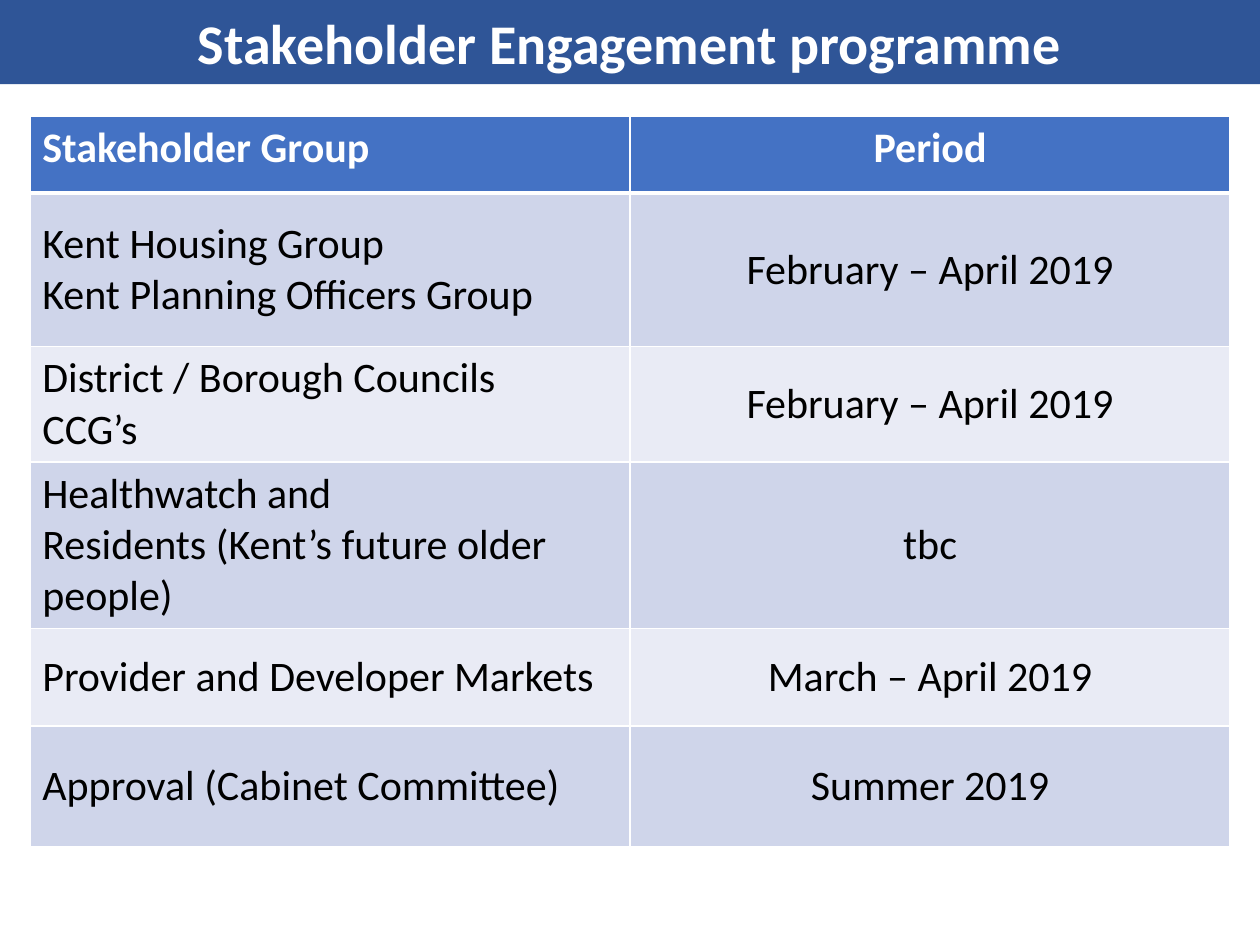
from dataclasses import dataclass

from lxml.etree import SubElement
from pptx import Presentation
from pptx.dml.color import RGBColor as Color
from pptx.enum.shapes import MSO_SHAPE as Shape
from pptx.enum.text import MSO_ANCHOR as Anchor, PP_ALIGN as Align
from pptx.oxml.ns import qn
from pptx.util import Cm, Pt


@dataclass(frozen=True)
class Theme:
    font: str = "Calibri"
    title_size: int = 32
    table_size: int = 24
    banner: str = "2F5597"
    header: str = "4472C4"
    bands: tuple = ("CFD5EA", "E9EBF5")
    light: str = "FFFFFF"
    dark: str = "000000"
    rule: int = 1
    header_rule: int = 3


class SlideBuilder:
    def __init__(self, page, theme):
        self.page = page
        self.theme = theme

    def set_text(self, frame, lines, size, color, bold=False, align=Align.LEFT):
        frame.text = "\n".join(lines)
        for para in frame.paragraphs:
            para.alignment = align
            font = para.font
            font.name = self.theme.font
            font.size = Pt(size)
            font.bold = bold
            font.color.rgb = Color.from_string(color)

    def banner(self, text, width, height):
        box = self.page.shapes.add_shape(Shape.RECTANGLE, 0, 0, width, height)
        box.shadow.inherit = False
        box.fill.solid()
        box.fill.fore_color.rgb = Color.from_string(self.theme.banner)
        box.line.fill.background()
        box.text_frame.vertical_anchor = Anchor.MIDDLE
        self.set_text(box.text_frame, [text], self.theme.title_size,
                      self.theme.light, bold=True, align=Align.CENTER)

    def borders(self, cell, top, bottom):
        properties = cell._tc.get_or_add_tcPr()
        rule = self.theme.rule
        for side, width in (("L", rule), ("R", rule), ("T", top), ("B", bottom)):
            line = SubElement(properties, qn(f"a:ln{side}"), w=str(Pt(width)))
            fill = SubElement(line, qn("a:solidFill"))
            SubElement(fill, qn("a:srgbClr"), val=self.theme.light)

    def table(self, rows, heights, left, top, width, height):
        theme = self.theme
        columns = len(rows[0])
        frame = self.page.shapes.add_table(len(rows), columns, left, top, width, height)
        table = frame.table
        for row, row_height in zip(table.rows, heights):
            row.height = Cm(row_height)
        frame.height = height

        for r, row in enumerate(rows):
            is_header = r == 0
            fill = theme.header if is_header else theme.bands[(r - 1) % 2]
            for c, lines in enumerate(row):
                cell = table.cell(r, c)
                # The heavy rule lies between the header and the first body row
                self.borders(cell,
                             top=theme.header_rule if r == 1 else theme.rule,
                             bottom=theme.header_rule if is_header else theme.rule)
                cell.fill.solid()
                cell.fill.fore_color.rgb = Color.from_string(fill)
                cell.vertical_anchor = Anchor.TOP if is_header else Anchor.MIDDLE
                self.set_text(cell.text_frame, lines, theme.table_size,
                              theme.light if is_header else theme.dark,
                              bold=is_header,
                              align=Align.CENTER if c else Align.LEFT)


PROGRAMME = [
    (["Stakeholder Group"], ["Period"]),
    (["Kent Housing Group", "Kent Planning Officers Group"], ["February – April 2019"]),
    (["District / Borough Councils", "CCG’s"], ["February – April 2019"]),
    (["Healthwatch and", "Residents (Kent’s future older people)"], ["tbc"]),
    (["Provider and Developer Markets"], ["March – April 2019"]),
    (["Approval (Cabinet Committee)"], ["Summer 2019"]),
]
ROW_HEIGHTS = [1.55, 3.1, 1.55, 1.55, 1.97, 2.44]


def main():
    deck = Presentation()
    deck.slide_width, deck.slide_height = Cm(25.4), Cm(19.05)
    page = deck.slides.add_slide(deck.slide_layouts[6])
    builder = SlideBuilder(page, Theme())

    # Title band across the top
    builder.banner("Stakeholder Engagement programme", deck.slide_width, Cm(1.7))

    # Engagement timetable
    builder.table(PROGRAMME, ROW_HEIGHTS, Cm(0.6), Cm(2.34), Cm(24.2), Cm(14.65))

    deck.save("out.pptx")


if __name__ == "__main__":
    main()
